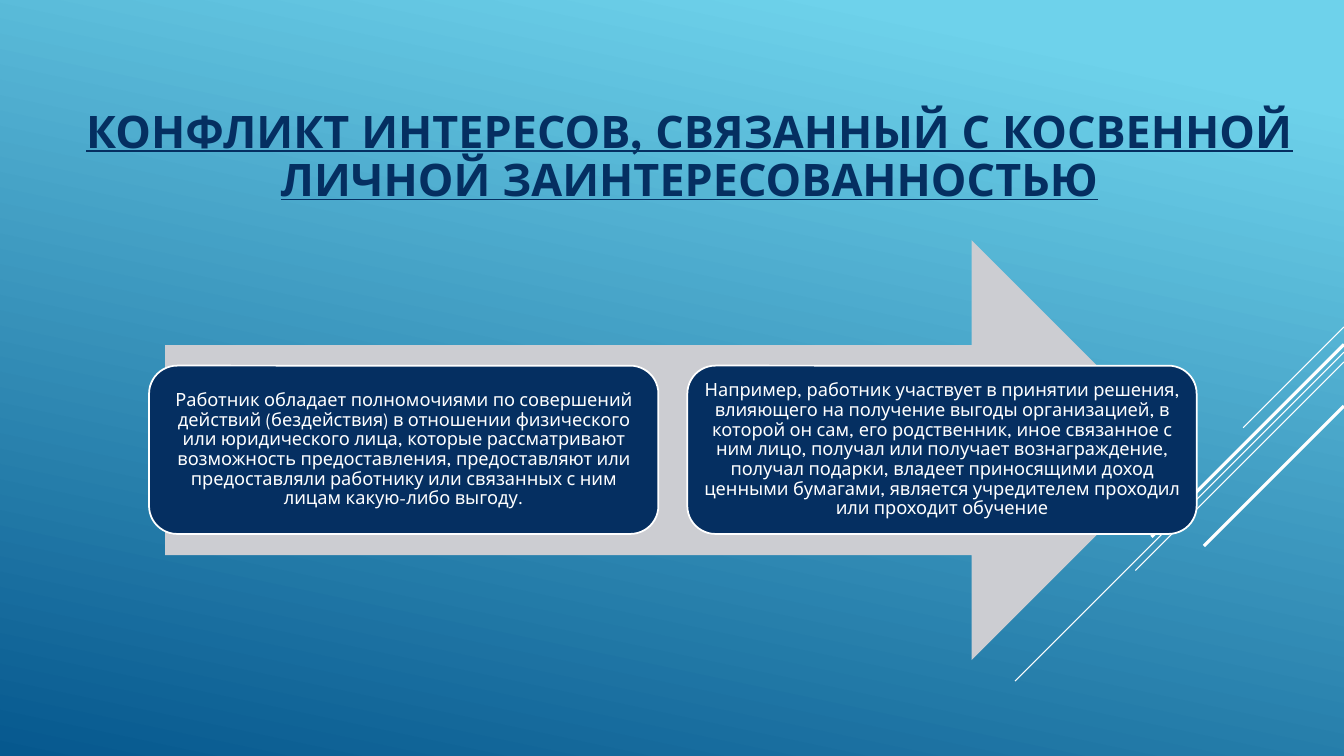
from dataclasses import dataclass

from lxml import etree
from pptx import Presentation
from pptx.dml.color import RGBColor
from pptx.enum.shapes import MSO_CONNECTOR, MSO_SHAPE
from pptx.enum.text import MSO_ANCHOR, PP_ALIGN
from pptx.oxml.ns import qn
from pptx.util import Pt

ARROW = MSO_SHAPE.RIGHT_ARROW
ROUNDED = MSO_SHAPE.ROUNDED_RECTANGLE
STRAIGHT = MSO_CONNECTOR.STRAIGHT
MIDDLE = MSO_ANCHOR.MIDDLE
CENTER = PP_ALIGN.CENTER


@dataclass(frozen=True)
class Theme:
    font: str = "League Spartan"
    title_size: float = 32
    body_size: float = 13
    sky: RGBColor = RGBColor(0x6E, 0xD2, 0xEB)
    ocean: RGBColor = RGBColor(0x06, 0x58, 0x8E)
    navy: RGBColor = RGBColor(0x05, 0x2F, 0x61)
    gray: RGBColor = RGBColor(0xCC, 0xCD, 0xD2)
    white: RGBColor = RGBColor(0xFF, 0xFF, 0xFF)


THEME = Theme()
SLIDE_WIDTH, SLIDE_HEIGHT = 960, 540

# Start height on the right edge, horizontal reach, line width
DIAGONALS = [
    (233.5, 72, 0.75),
    (251.5, 235, 0.75),
    (258.5, 149, 0.75),
    (246, 137.5, 2.25),
    (290, 100, 2.25),
]

TITLE = "КОНФЛИКТ ИНТЕРЕСОВ, СВЯЗАННЫЙ С КОСВЕННОЙ ЛИЧНОЙ ЗАИНТЕРЕСОВАННОСТЬЮ"
CARDS = [
    "Работник обладает полномочиями по совершений действий (бездействия) в отношении "
    "физического или юридического лица, которые рассматривают возможность предоставления, "
    "предоставляют или предоставляли работнику или связанных с ним лицам какую-либо выгоду.",
    "Например, работник участвует в принятии решения, влияющего на получение выгоды "
    "организацией, в которой он сам, его родственник, иное связанное с ним лицо, получал "
    "или получает вознаграждение, получал подарки, владеет приносящими доход ценными "
    "бумагами, является учредителем проходил или проходит обучение",
]
CARD_LEFT, CARD_TOP, CARD_WIDTH, CARD_HEIGHT = 106.5, 261.2, 363.8, 120.2
CARD_STEP = 384.5


def paint_background(slide):
    fill = slide.background.fill
    fill.gradient()
    fill.gradient_angle = 258
    stops = zip(fill.gradient_stops, [(0.1, THEME.sky), (1, THEME.ocean)])
    for stop, (position, color) in stops:
        stop.position = position
        stop.color.rgb = color


def add_diagonal(slide, top, reach, width):
    """Draw a 45° line from the right edge down to the left."""
    line = slide.shapes.add_connector(
        STRAIGHT, Pt(SLIDE_WIDTH), Pt(top), Pt(SLIDE_WIDTH - reach), Pt(top + reach)
    )
    line.line.color.rgb = THEME.white
    line.line.width = Pt(width)
    etree.SubElement(line._element.spPr, qn("a:effectLst"))


def write_text(shape, text, size, color, inset, emphasis=False):
    frame = shape.text_frame
    frame.word_wrap = True
    frame.vertical_anchor = MIDDLE
    frame.margin_left = frame.margin_right = Pt(inset)
    frame.margin_top = frame.margin_bottom = Pt(inset)
    paragraph = frame.paragraphs[0]
    paragraph.alignment = CENTER
    paragraph.line_spacing = 0.9
    run = paragraph.add_run()
    run.text = text
    font = run.font
    font.name = THEME.font
    font.size = Pt(size)
    font.color.rgb = color
    font.bold = font.underline = emphasis


def add_title(slide, text):
    box = slide.shapes.add_textbox(Pt(54), Pt(54), Pt(877), Pt(117.5))
    write_text(box, text, THEME.title_size, THEME.navy, 5, emphasis=True)


def add_filled_shape(slide, kind, left, top, width, height, color):
    shape = slide.shapes.add_shape(kind, Pt(left), Pt(top), Pt(width), Pt(height))
    shape.shadow.inherit = False
    shape.fill.solid()
    shape.fill.fore_color.rgb = color
    shape.line.fill.background()
    return shape


def add_card(slide, left, text):
    card = add_filled_shape(
        slide, ROUNDED, left, CARD_TOP, CARD_WIDTH, CARD_HEIGHT, THEME.navy
    )
    card.line.color.rgb = THEME.white
    card.line.width = Pt(1.25)
    write_text(card, text, THEME.body_size, THEME.white, 3.75)


def main():
    presentation = Presentation()
    presentation.slide_width = Pt(SLIDE_WIDTH)
    presentation.slide_height = Pt(SLIDE_HEIGHT)
    slide = presentation.slides.add_slide(presentation.slide_layouts[6])
    paint_background(slide)
    for top, reach, width in DIAGONALS:
        add_diagonal(slide, top, reach, width)
    add_title(slide, TITLE)
    add_filled_shape(slide, ARROW, 118, 171.5, 726, 300, THEME.gray)
    for index, text in enumerate(CARDS):
        add_card(slide, CARD_LEFT + index * CARD_STEP, text)
    presentation.save("out.pptx")


if __name__ == "__main__":
    main()
